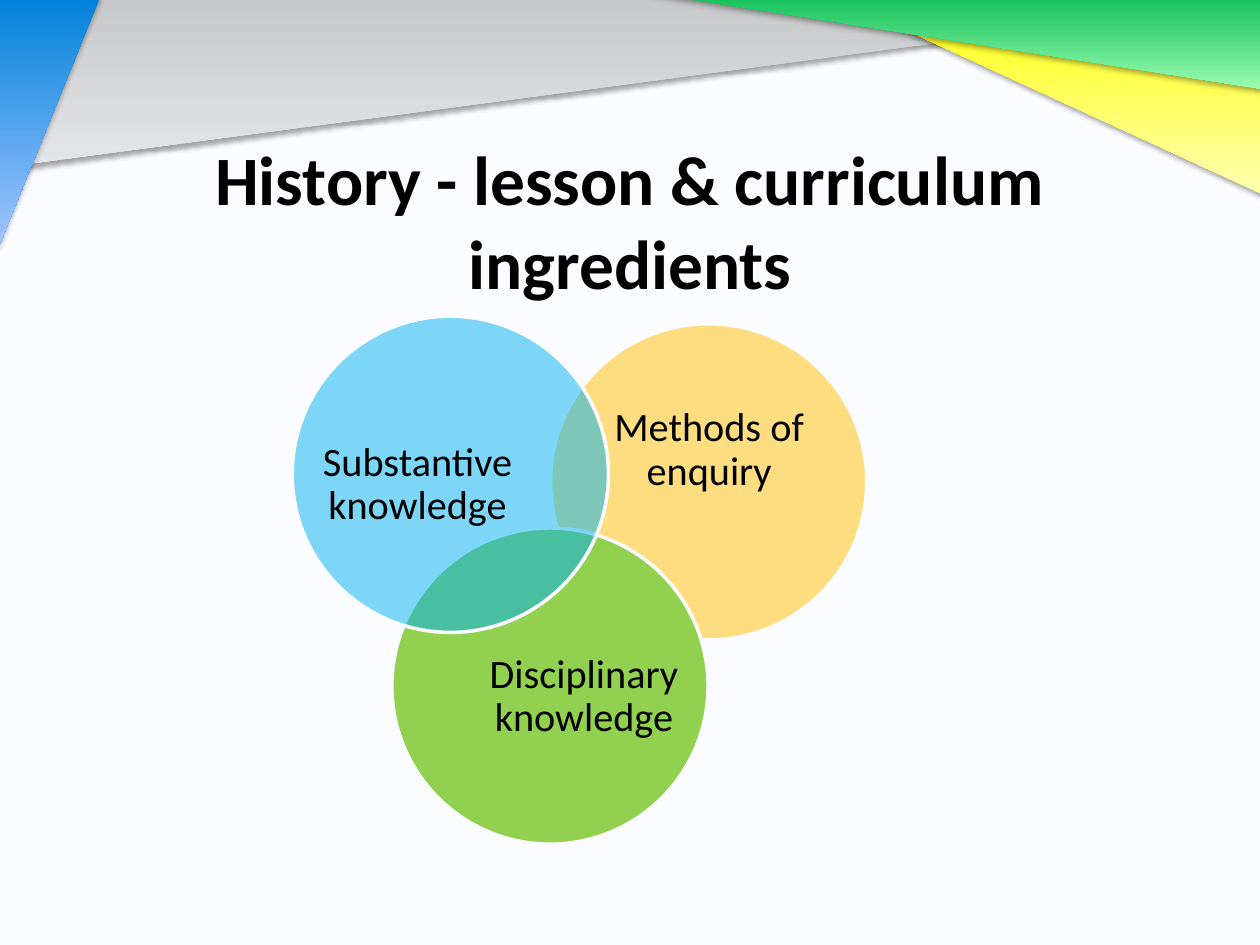
from dataclasses import dataclass

from lxml.etree import SubElement
from pptx import Presentation
from pptx.dml.color import RGBColor
from pptx.enum.shapes import MSO_SHAPE
from pptx.enum.text import MSO_ANCHOR, MSO_AUTO_SIZE, PP_ALIGN
from pptx.oxml.ns import qn
from pptx.util import Pt


@dataclass(frozen=True)
class Theme:
    font: str = "Calibri"
    head: float = 39.6
    label: float = 23
    ink: str = "000000"
    back: str = "FBFCFF"
    grey: tuple = ("C7C8CA", "E4E5E8")
    blue: tuple = ("0081DA", "A2C5FF")
    yellow: tuple = ("FFFF06", "FFFFB1")
    green: tuple = ("0ABD53", "9AFCB0")
    gold: str = "FFC000"
    lime: str = "92D050"
    sky: str = "00B0F0"


THEME = Theme()
DISC = 180.7  # diameter of each circle


def rgb(code):
    return RGBColor.from_string(code)


def lengths(box):
    return [Pt(x) for x in box]


def add_shade(shape):
    """Soft shadow just below the shape."""
    shape.shadow.inherit = False
    effects = shape._element.spPr.find(qn("a:effectLst"))
    shade = SubElement(effects, qn("a:outerShdw"), blurRad=str(Pt(3.1)),
                       dist=str(Pt(1.8)), dir="5400000", rotWithShape="0")
    color = SubElement(shade, qn("a:srgbClr"), val=THEME.ink)
    SubElement(color, qn("a:alpha"), val="35000")


def add_wedge(slide, box, colors, turn=0, flip=None):
    """Corner triangle, dark at the top and light below."""
    wedge = slide.shapes.add_shape(MSO_SHAPE.RIGHT_TRIANGLE, *lengths(box))
    wedge.rotation = turn
    if flip:
        wedge._element.spPr.xfrm.set(flip, "1")
    wedge.fill.gradient()
    wedge.fill.gradient_angle = 90
    for stop, code in zip(wedge.fill.gradient_stops, colors):
        stop.color.rgb = rgb(code)
    wedge.line.fill.background()
    add_shade(wedge)


def write(frame, text, size, bold=False):
    """Centred text in one run."""
    frame.word_wrap = True
    frame.auto_size = MSO_AUTO_SIZE.NONE
    frame.vertical_anchor = MSO_ANCHOR.MIDDLE
    para = frame.paragraphs[0]
    para.alignment = PP_ALIGN.CENTER
    run = para.add_run()
    run.text = text
    font = run.font
    font.name, font.size, font.bold = THEME.font, Pt(size), bold
    font.color.rgb = rgb(THEME.ink)
    return para


def add_title(slide, text, box):
    title = slide.shapes.title
    title.left, title.top, title.width, title.height = lengths(box)
    write(title.text_frame, text, THEME.head, bold=True)
    slide.shapes._spTree.append(title._element)  # in front of the wedges


def add_disc(slide, left, top, code, clear=False):
    disc = slide.shapes.add_shape(MSO_SHAPE.OVAL,
                                  *lengths((left, top, DISC, DISC)))
    disc.shadow.inherit = False
    disc.fill.solid()
    disc.fill.fore_color.rgb = rgb(code)
    if clear:
        color = disc._element.spPr.find(qn("a:solidFill"))[0]
        SubElement(color, qn("a:alpha"), val="50000")
    disc.line.color.rgb = rgb(THEME.back)
    disc.line.width = Pt(2)


def add_label(slide, text, box):
    frame = slide.shapes.add_textbox(*lengths(box)).text_frame
    frame.margin_left = frame.margin_right = 0
    frame.margin_top = frame.margin_bottom = 0
    write(frame, text, THEME.label).line_spacing = 0.9


def main():
    deck = Presentation()
    deck.slide_width, deck.slide_height = Pt(720), Pt(540)
    slide = deck.slides.add_slide(deck.slide_layouts[5])
    slide.background.fill.solid()
    slide.background.fill.fore_color.rgb = rgb(THEME.back)

    # Coloured wedges along the top
    add_wedge(slide, (0, 0, 720, 95.8), THEME.grey, flip="flipV")
    add_wedge(slide, (-1.4, -2.9, 59, 145.4), THEME.blue, 180, "flipH")
    add_wedge(slide, (470.9, -4.3, 252, 115.9), THEME.yellow, 180)
    add_wedge(slide, (360, -5.8, 362.9, 56.9), THEME.green, 180)

    # Heading
    add_title(slide, "History - lesson & curriculum ingredients",
              (36, 80.6, 648, 90))

    # Three overlapping circles, each with its label
    add_disc(slide, 314.6, 185, THEME.gold, clear=True)
    add_label(slide, "Methods of enquiry", (339.1, 216.7, 132.5, 81.4))
    add_disc(slide, 223.9, 301.7, THEME.lime)
    add_label(slide, "Disciplinary knowledge", (279.4, 348.5, 108.7, 99.4))
    add_disc(slide, 167, 180.7, THEME.sky, clear=True)
    add_label(slide, "Substantive knowledge", (184.3, 227.5, 108.7, 99.4))

    deck.save("out.pptx")


if __name__ == "__main__":
    main()
